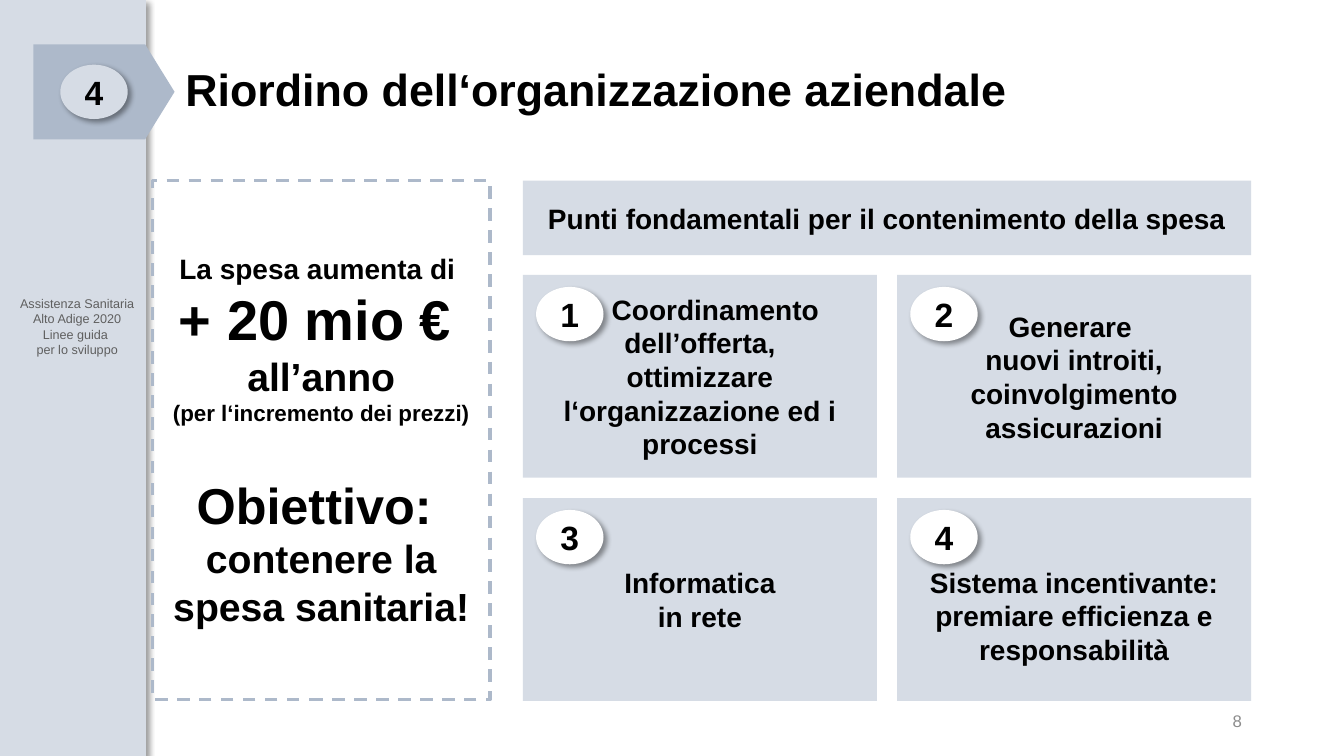
from dataclasses import dataclass

import pptx
import pptx.dml.color
import pptx.enum.dml
import pptx.enum.shapes
import pptx.enum.text
import pptx.oxml
import pptx.oxml.ns
import pptx.util

Cm = pptx.util.Cm
Pt = pptx.util.Pt
SHAPES = pptx.enum.shapes.MSO_SHAPE
ALIGN = pptx.enum.text.PP_ALIGN
ANCHOR = pptx.enum.text.MSO_ANCHOR


@dataclass(frozen=True)
class Theme:
    font: str = "Arial"
    black: str = "000000"
    white: str = "FFFFFF"
    pale: str = "D6DCE5"
    accent: str = "ADB9CA"
    side_grey: str = "5F5F5F"
    number_grey: str = "8C8C8C"
    title: int = 32
    badge: int = 24
    body: int = 20
    small: int = 16
    page_number: int = 12
    side_note: int = 9
    amount: int = 40
    goal: int = 36
    emphasis: int = 28


class SlideBuilder:
    def __init__(self, slide, theme):
        self.slide = slide
        self.theme = theme

    def fill_text(self, shape, paragraphs, size, color=None, bold=True,
                  align=ALIGN.CENTER, anchor=ANCHOR.MIDDLE):
        """Each paragraph is a string or a list of (text, size) runs."""
        frame = shape.text_frame
        frame.word_wrap = True
        frame.vertical_anchor = anchor
        for index, content in enumerate(paragraphs):
            paragraph = frame.add_paragraph() if index else frame.paragraphs[0]
            paragraph.alignment = align
            runs = [(content, size)] if isinstance(content, str) else content
            for text, run_size in runs:
                run = paragraph.add_run()
                run.text = text
                run.font.name = self.theme.font
                run.font.size = Pt(run_size)
                run.font.bold = bold
                run.font.color.rgb = pptx.dml.color.RGBColor.from_string(color or self.theme.black)
        return frame

    def shape(self, kind, left, top, width, height, fill=None):
        shape = self.slide.shapes.add_shape(kind, Cm(left), Cm(top), Cm(width), Cm(height))
        shape.shadow.inherit = False
        shape.line.fill.background()
        if fill:
            shape.fill.solid()
            shape.fill.fore_color.rgb = pptx.dml.color.RGBColor.from_string(fill)
        else:
            shape.fill.background()
        return shape

    def cast_shadow(self, shape):
        effects = shape._element.spPr.find(pptx.oxml.ns.qn("a:effectLst"))
        effects.append(pptx.oxml.parse_xml(
            f'<a:outerShdw {pptx.oxml.ns.nsdecls("a")} blurRad="{Pt(4)}" dist="{Pt(3)}" '
            'dir="2700000" algn="tl" rotWithShape="0">'
            f'<a:srgbClr val="{self.theme.black}"><a:alpha val="40000"/></a:srgbClr>'
            '</a:outerShdw>'))

    def text_box(self, left, top, width, height, paragraphs, size, **style):
        box = self.slide.shapes.add_textbox(Cm(left), Cm(top), Cm(width), Cm(height))
        return self.fill_text(box, paragraphs, size, **style)

    def card(self, left, top, width, height, paragraphs):
        card = self.shape(SHAPES.RECTANGLE, left, top, width, height, self.theme.pale)
        return self.fill_text(card, paragraphs, self.theme.body)

    def badge(self, left, top, number, fill):
        badge = self.shape(SHAPES.OVAL, left, top, 1.7, 1.37, fill)
        self.cast_shadow(badge)
        frame = self.fill_text(badge, [number], self.theme.badge)
        frame.margin_left = frame.margin_right = 0
        frame.margin_top = frame.margin_bottom = 0

    def dashed_panel(self, left, top, width, height, paragraphs):
        panel = self.shape(SHAPES.RECTANGLE, left, top, width, height)
        panel.line.color.rgb = pptx.dml.color.RGBColor.from_string(self.theme.accent)
        panel.line.width = Pt(2.25)
        panel.line.dash_style = pptx.enum.dml.MSO_LINE.DASH
        return self.fill_text(panel, paragraphs, self.theme.body)


def main():
    presentation = pptx.Presentation()
    presentation.slide_width = Cm(33.87)
    presentation.slide_height = Cm(19.05)
    theme = Theme()
    builder = SlideBuilder(presentation.slides.add_slide(presentation.slide_layouts[6]), theme)

    # Sidebar
    sidebar = builder.shape(SHAPES.RECTANGLE, 0, 0, 3.68, 19.05, theme.pale)
    builder.cast_shadow(sidebar)
    builder.text_box(0, 7.34, 3.89, 2.16,
                     ["Assistenza Sanitaria Alto Adige 2020", "Linee guida ", "per lo sviluppo"],
                     theme.side_note, color=theme.side_grey, bold=False, anchor=ANCHOR.TOP)

    # Page number
    builder.text_box(23.93, 17.65, 7.62, 1.02, ["8"], theme.page_number,
                     color=theme.number_grey, bold=False, align=ALIGN.RIGHT)

    # Title with chapter marker
    title = builder.text_box(4.42, 1.02, 27.13, 2.62, ["Riordino dell‘organizzazione aziendale"],
                             theme.title, align=ALIGN.LEFT)
    title.paragraphs[0].line_spacing = 0.9
    marker = builder.shape(SHAPES.PENTAGON, 0.84, 1.12, 3.56, 2.39, theme.accent)
    marker.adjustments[0] = 0.31
    builder.badge(1.52, 1.63, "4", theme.pale)

    # Heading over the four cards
    grid_left, grid_top = 13.18, 6.93
    card_width, card_height, gap = 8.92, 5.11, 0.51
    builder.card(grid_left, 4.55, 2 * card_width + gap, 1.88,
                 ["Punti fondamentali per il contenimento della spesa"])

    # Numbered cards in two columns
    measures = [
        ["Coordinamento dell’offerta,", "ottimizzare l‘organizzazione ed i processi"],
        ["Generare ", "nuovi introiti,", "coinvolgimento assicurazioni"],
        ["Informatica", "in rete"],
        ["Sistema incentivante: premiare efficienza e responsabilità"],
    ]
    frames = []
    for index, paragraphs in enumerate(measures):
        row, column = divmod(index, 2)
        left = grid_left + column * (card_width + gap)
        top = grid_top + row * (card_height + gap)
        frames.append(builder.card(left, top, card_width, card_height, paragraphs))
        builder.badge(left + 0.33, top + 0.3, str(index + 1), theme.white)
    # Keep the first and last text clear of their badges
    frames[0].paragraphs[0]._p.get_or_add_pPr().set("indent", str(Pt(22)))
    frames[-1].margin_top = Cm(0.94)

    # Spending panel
    panel = builder.dashed_panel(3.84, 4.55, 8.51, 13.08, [
        "La spesa aumenta di ",
        [("+ 20 mio €", theme.amount), (" ", theme.title)],
        [("all’anno", theme.emphasis)],
        [("(per l‘incremento dei prezzi)", theme.small)],
        [("Obiettivo: ", theme.goal)],
        [("contenere la spesa sanitaria!", theme.emphasis)],
    ])
    panel.paragraphs[4].space_before = Pt(34.5)

    presentation.save("out.pptx")


if __name__ == "__main__":
    main()
